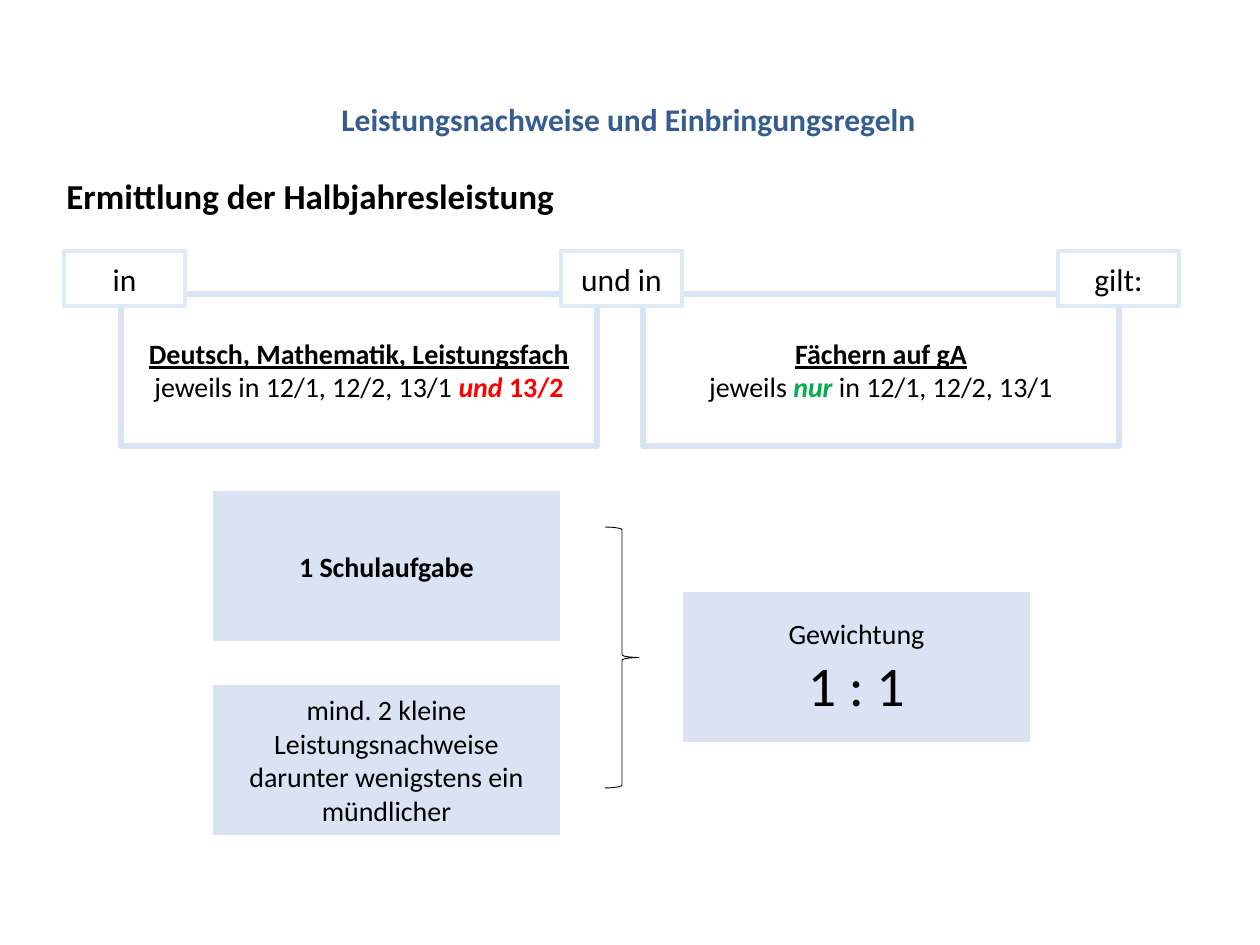
from pptx import Presentation
from pptx.dml.color import RGBColor
from pptx.enum.shapes import MSO_SHAPE
from pptx.enum.text import MSO_ANCHOR, PP_ALIGN
from pptx.util import Pt

PX = 914400 / 126
RECT, BRACE = MSO_SHAPE.RECTANGLE, MSO_SHAPE.RIGHT_BRACE
CENTER, MIDDLE = PP_ALIGN.CENTER, MSO_ANCHOR.MIDDLE
BLACK, WHITE, PALE, ICE = "000000", "FFFFFF", "DAE3F3", "DEEBF7"
RED, GREEN, BLUE = "FF0000", "00B050", "355D90"


def write(frame, lines, align=None):
    """Each line is a list of runs: (text, size, colour, styles from 'biu')."""
    frame.word_wrap = True
    for i, runs in enumerate(lines):
        paragraph = frame.paragraphs[0] if i == 0 else frame.add_paragraph()
        paragraph.alignment = align
        for text, size, color, styles in runs:
            run = paragraph.add_run()
            run.text = text
            font = run.font
            font.name, font.size = "Calibri", Pt(size)
            font.color.rgb = RGBColor.from_string(color)
            font.bold, font.italic, font.underline = (s in styles for s in "biu")


def add_box(box, fill, line, line_width, lines):
    shape = slide.shapes.add_shape(RECT, *(round(v * PX) for v in box))
    shape.shadow.inherit = False
    shape.fill.solid()
    shape.fill.fore_color.rgb = RGBColor.from_string(fill)
    shape.line.color.rgb = RGBColor.from_string(line)
    shape.line.width = Pt(line_width)
    shape.text_frame.vertical_anchor = MIDDLE
    write(shape.text_frame, lines, CENTER)


prs = Presentation()
prs.slide_width, prs.slide_height = round(1260 * PX), round(945 * PX)
slide = prs.slides.add_slide(prs.slide_layouts[6])

# Title and heading
headings = [
    ((329, 94, 1181, 110), "Leistungsnachweise und Einbringungsregeln", 18, BLUE),
    ((54, 168, 1140, 55), "Ermittlung der Halbjahresleistung", 20, BLACK),
]
for box, text, size, color in headings:
    heading = slide.shapes.add_textbox(*(round(v * PX) for v in box))
    write(heading.text_frame, [[(text, size, color, "b")]])

# Assessments and their weighting
assessments = [
    (212, 490, [[("1 Schulaufgabe", 16, BLACK, "b")]]),
    (212, 684, [[("mind. 2 kleine Leistungsnachweise darunter wenigstens ein mündlicher",
                  16, BLACK, "")]]),
    (682, 591, [[("Gewichtung", 16, BLACK, "")], [("1 : 1", 32, BLACK, "")]]),
]
for left, top, lines in assessments:
    add_box((left, top, 349, 152), PALE, WHITE, 1, lines)

# Subject groups
subjects = [
    (121, [[("Deutsch, Mathematik, Leistungsfach", 16, BLACK, "bu")],
           [("jeweils in 12/1, 12/2, 13/1 ", 16, BLACK, ""),
            ("und ", 16, RED, "bi"), ("13/2", 16, RED, "b")]]),
    (643, [[("Fächern auf gA", 16, BLACK, "bu")],
           [("jeweils ", 16, BLACK, ""), ("nur ", 16, GREEN, "bi"),
            ("in 12/1, 12/2, 13/1", 16, BLACK, "")]]),
]
for left, lines in subjects:
    add_box((left, 294, 476, 152), WHITE, PALE, 3, lines)

# Linking words over the frame corners
for i, word in enumerate(["in", "und in", "gilt:"]):
    add_box((64 + 497 * i, 251, 121, 55), WHITE, ICE, 2.25, [[(word, 18, BLACK, "")]])

# Brace from the assessments to the weighting
brace = slide.shapes.add_shape(BRACE, *(round(v * PX) for v in (605, 527, 34, 261)))
brace.shadow.inherit = False
brace.fill.background()
brace.line.color.rgb = RGBColor.from_string(BLACK)
brace.line.width = Pt(0.5)

prs.save("out.pptx")
